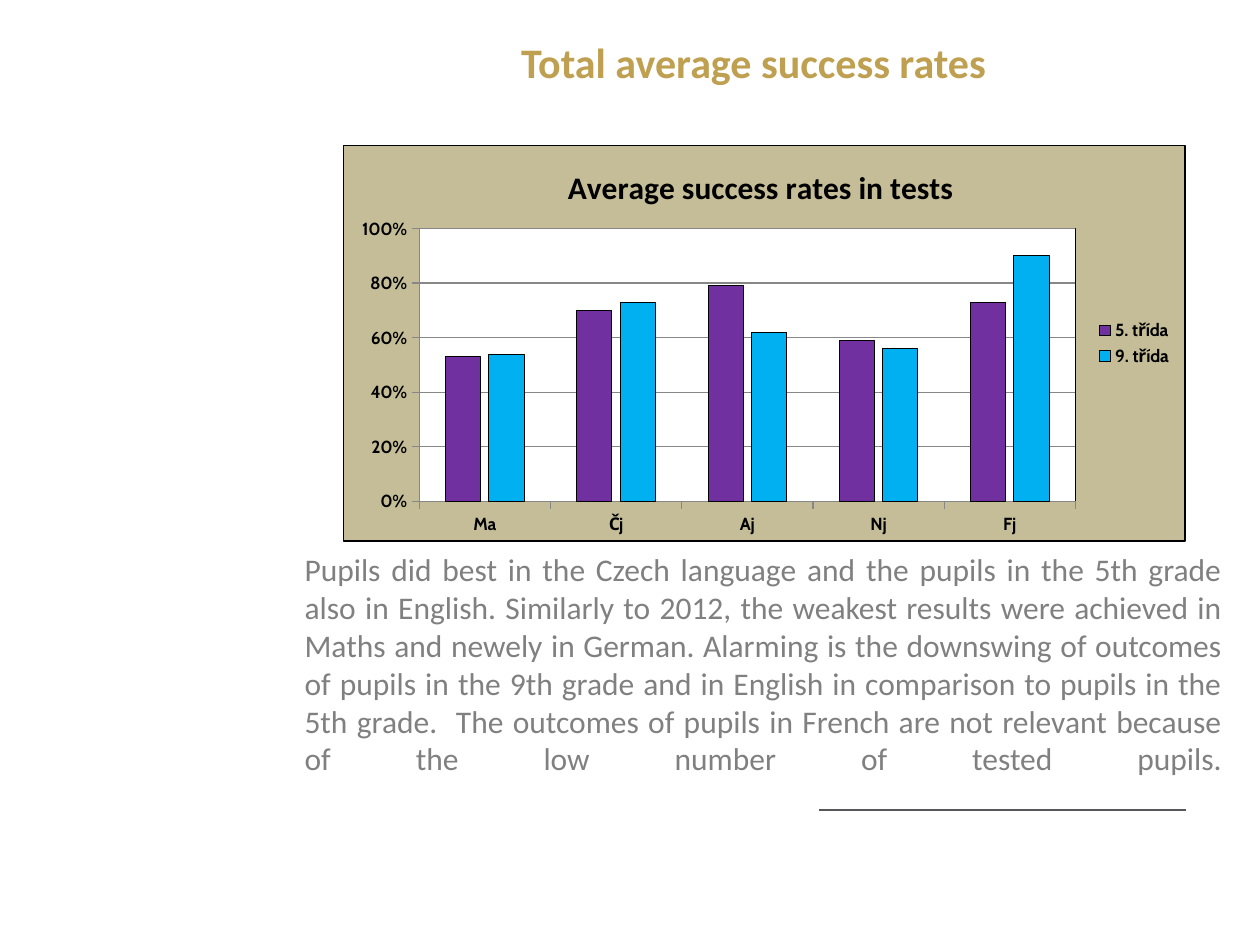
import pptx
import pptx.chart.data
import pptx.dml.color
import pptx.enum.chart
import pptx.enum.shapes
import pptx.enum.text
import pptx.oxml
import pptx.util
from dataclasses import dataclass

Cm = pptx.util.Cm
Pt = pptx.util.Pt
Color = pptx.dml.color.RGBColor.from_string
NAMESPACES = (
    'xmlns:c="http://schemas.openxmlformats.org/drawingml/2006/chart" '
    'xmlns:a="http://schemas.openxmlformats.org/drawingml/2006/main"'
)


@dataclass(frozen=True)
class Theme:
    text_font: str = "Calibri"
    label_font: str = "Cabin"
    gold: str = "BFA050"
    gray: str = "808080"
    rule: str = "58565B"
    grid: str = "878787"
    black: str = "000000"
    white: str = "FFFFFF"
    sand: str = "C4BD97"
    bars: tuple = ("7030A0", "00B0F0")
    heading: int = 24
    body: int = 18
    label: int = 10


theme = Theme()


def set_font(font, name, size, color, bold):
    font.name, font.size, font.bold = name, Pt(size), bold
    font.color.rgb = Color(color)


def area_format(fill, line):
    return pptx.oxml.parse_xml(
        f'<c:spPr {NAMESPACES}><a:solidFill><a:srgbClr val="{fill}"/></a:solidFill>'
        f'<a:ln w="9525"><a:solidFill><a:srgbClr val="{line}"/></a:solidFill></a:ln></c:spPr>'
    )


deck = pptx.Presentation()
deck.slide_width, deck.slide_height = Cm(25.4), Cm(19.05)
page = deck.slides.add_slide(deck.slide_layouts[6])

# Rule at the foot
rule = page.shapes.add_connector(
    pptx.enum.shapes.MSO_CONNECTOR.STRAIGHT, Cm(23.9), Cm(16.33), Cm(16.51), Cm(16.33)
)
rule.line.color.rgb = Color(theme.rule)
rule.line.width = Pt(0.75)
rule._element.spPr.append(pptx.oxml.parse_xml(f"<a:effectLst {NAMESPACES}/>"))

# Heading and commentary; the closing line break keeps the last line justified
commentary = (
    "Pupils did best in the Czech language and the pupils in the 5th grade also in English. "
    "Similarly to 2012, the weakest results were achieved in Maths and newely in German. "
    "Alarming is the downswing of outcomes of pupils in the 9th grade and in English in "
    "comparison to pupils in the 5th grade.  The outcomes of pupils in French are not "
    "relevant because of the low number of tested pupils.\v"
)
align = pptx.enum.text.PP_ALIGN
anchor = pptx.enum.text.MSO_ANCHOR
texts = [
    ("Total average success rates", (5.69, 0.13, 19, 2.21), align.CENTER, anchor.MIDDLE,
     theme.heading, theme.gold, True),
    (commentary, (5.89, 10.97, 19, 5.36), align.JUSTIFY, anchor.TOP,
     theme.body, theme.gray, False),
]
for words, place, alignment, vertical, size, color, bold in texts:
    box = page.shapes.add_textbox(*map(Cm, place))
    frame = box.text_frame
    frame.word_wrap = True
    frame.vertical_anchor = vertical
    para = frame.paragraphs[0]
    para.text = words
    para.alignment = alignment
    set_font(para.font, theme.text_font, size, color, bold)

# Chart data
data = pptx.chart.data.CategoryChartData(number_format="0%")
data.categories = ["Ma", "Čj", "Aj", "Nj", "Fj"]
data.add_series("5. třída", [0.53, 0.7, 0.79, 0.59, 0.73])
data.add_series("9. třída", [0.54, 0.73, 0.62, 0.56, 0.9])
chart = page.shapes.add_chart(
    pptx.enum.chart.XL_CHART_TYPE.COLUMN_CLUSTERED,
    Cm(6.91), Cm(2.92), Cm(16.99), Cm(8), data,
).chart
set_font(chart.font, theme.text_font, theme.label, theme.black, False)

# Chart title and legend
chart.has_title = True
title = chart.chart_title
title.include_in_layout = False
para = title.text_frame.paragraphs[0]
para.text = "Average success rates in tests "
set_font(para.font, theme.text_font, theme.body, theme.black, True)
chart.has_legend = True
chart.legend.position = pptx.enum.chart.XL_LEGEND_POSITION.RIGHT
chart.legend.include_in_layout = False
set_font(chart.legend.font, theme.label_font, theme.label, theme.black, True)

# Axes
for axis in (chart.category_axis, chart.value_axis):
    axis.major_tick_mark = pptx.enum.chart.XL_TICK_MARK.OUTSIDE
    axis.format.line.color.rgb = Color(theme.grid)
    set_font(axis.tick_labels.font, theme.label_font, theme.label, theme.black, True)
scale = chart.value_axis
scale.minimum_scale, scale.maximum_scale, scale.major_unit = 0, 1, 0.2
scale.tick_labels.number_format = "0%"
scale.tick_labels.number_format_is_linked = False
scale.major_gridlines.format.line.color.rgb = Color(theme.grid)

# Columns
plot = chart.plots[0]
plot.vary_by_categories = False
plot.gap_width, plot.overlap = 150, -23
for series, color in zip(plot.series, theme.bars):
    series.format.fill.solid()
    series.format.fill.fore_color.rgb = Color(color)
    series.format.line.color.rgb = Color(theme.black)
    series.format.line.width = Pt(0.5)

# Backgrounds and position of the plot area
chart_xml = chart._chartSpace.chart
chart_xml.addnext(area_format(theme.sand, theme.black))
plot_area = chart_xml.plotArea
plot_area.append(area_format(theme.white, theme.black))
for layout in plot_area.findall(pptx.oxml.ns.qn("c:layout")):
    plot_area.remove(layout)
bounds = {"x": 0.09, "y": 0.21, "w": 0.78, "h": 0.69}
modes = '<c:xMode val="edge"/><c:yMode val="edge"/>'
sizes = "".join(f'<c:{key} val="{share}"/>' for key, share in bounds.items())
plot_area.insert(0, pptx.oxml.parse_xml(
    f'<c:layout {NAMESPACES}><c:manualLayout><c:layoutTarget val="inner"/>'
    f"{modes}{sizes}</c:manualLayout></c:layout>"
))

deck.save("out.pptx")
